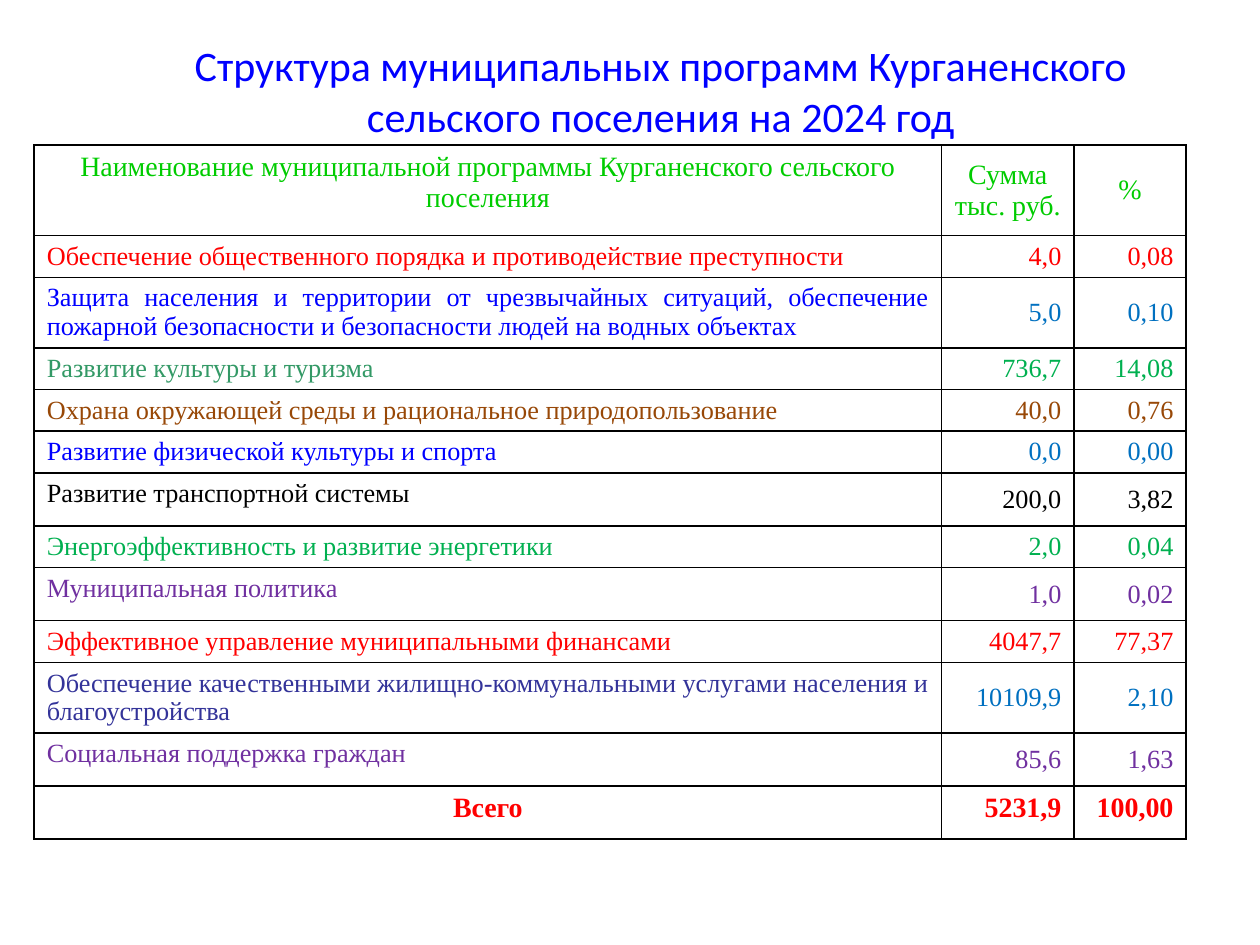
from dataclasses import dataclass

from lxml import etree
from pptx import Presentation
from pptx.dml.color import RGBColor
from pptx.enum.text import MSO_ANCHOR, MSO_AUTO_SIZE, PP_ALIGN
from pptx.oxml.ns import qn
from pptx.util import Cm, Pt

TOP, MIDDLE = MSO_ANCHOR.TOP, MSO_ANCHOR.MIDDLE
LEFT_RIGHT, CENTER, RIGHT = PP_ALIGN.JUSTIFY, PP_ALIGN.CENTER, PP_ALIGN.RIGHT
NO_AUTOFIT = MSO_AUTO_SIZE.NONE
TITLE_ONLY = 5


@dataclass(frozen=True)
class Theme:
    title_font: str = "Calibri"
    table_font: str = "Times New Roman"
    title_size: int = 24
    heading_size: int = 16
    body_size: int = 15
    border_width: int = 1
    black: str = "000000"
    red: str = "FF0000"
    blue: str = "0000FF"
    azure: str = "0070C0"
    lime: str = "00CC00"
    green: str = "00B050"
    sea_green: str = "339966"
    brown: str = "984807"
    purple: str = "7030A0"
    indigo: str = "333399"


THEME = Theme()
HEADER_ROW, SINGLE_ROW, DOUBLE_ROW, TALL_ROW = 1.83, 0.84, 1.42, 1.07
COLUMN_WIDTHS = (18.29, 2.67, 2.26)

TITLE = "Структура муниципальных программ Курганенского сельского поселения на 2024 год"
HEADINGS = (
    "Наименование муниципальной программы Курганенского сельского поселения",
    "Сумма тыс. руб.",
    "%",
)
# Name, amount, share, name colour, number colour, row height
PROGRAMS = (
    ("Обеспечение общественного порядка и противодействие преступности",
     "4,0", "0,08", THEME.red, THEME.red, SINGLE_ROW),
    ("Защита населения и территории от чрезвычайных ситуаций, обеспечение "
     "пожарной безопасности и безопасности людей на водных объектах",
     "5,0", "0,10", THEME.blue, THEME.azure, DOUBLE_ROW),
    ("Развитие культуры и туризма",
     "736,7", "14,08", THEME.sea_green, THEME.green, SINGLE_ROW),
    ("Охрана окружающей среды и рациональное природопользование",
     "40,0", "0,76", THEME.brown, THEME.brown, SINGLE_ROW),
    ("Развитие физической культуры и спорта",
     "0,0", "0,00", THEME.blue, THEME.azure, SINGLE_ROW),
    ("Развитие транспортной системы",
     "200,0", "3,82", THEME.black, THEME.black, TALL_ROW),
    ("Энергоэффективность и развитие энергетики",
     "2,0", "0,04", THEME.green, THEME.green, SINGLE_ROW),
    ("Муниципальная политика",
     "1,0", "0,02", THEME.purple, THEME.purple, TALL_ROW),
    ("Эффективное управление муниципальными финансами",
     "4047,7", "77,37", THEME.red, THEME.red, SINGLE_ROW),
    ("Обеспечение качественными жилищно-коммунальными услугами населения "
     "и благоустройства",
     "10109,9", "2,10", THEME.indigo, THEME.azure, DOUBLE_ROW),
    ("Социальная поддержка граждан",
     "85,6", "1,63", THEME.purple, THEME.purple, TALL_ROW),
)
TOTALS = ("Всего", "5231,9", "100,00")


class SlideBuilder:
    """Holds the theme and the slide being filled."""

    def __init__(self, slide, theme):
        self.slide = slide
        self.theme = theme

    def format_text(self, text_frame, text, font_name, size, color, align, bold=False):
        text_frame.text = text
        paragraph = text_frame.paragraphs[0]
        paragraph.alignment = align
        font = paragraph.font
        font.name, font.size, font.bold = font_name, Pt(size), bold
        font.color.rgb = RGBColor.from_string(color)

    def title(self, text, left, top, width, height):
        shape = self.slide.shapes.title
        shape.left, shape.top = Cm(left), Cm(top)
        shape.width, shape.height = Cm(width), Cm(height)
        text_frame = shape.text_frame
        text_frame.word_wrap = True
        text_frame.auto_size = NO_AUTOFIT
        text_frame.vertical_anchor = MIDDLE
        self.format_text(text_frame, text, self.theme.title_font,
                         self.theme.title_size, self.theme.blue, CENTER)

    def table(self, left, top, column_widths, row_heights):
        table = self.slide.shapes.add_table(
            len(row_heights), len(column_widths), Cm(left), Cm(top),
            Cm(sum(column_widths)), Cm(sum(row_heights))).table
        table.first_row = table.horz_banding = False
        for column, width in zip(table.columns, column_widths):
            column.width = Cm(width)
        for row, height in zip(table.rows, row_heights):
            row.height = Cm(height)
        return table

    def cell(self, cell, text, size, color, align, anchor, bold=False):
        cell.vertical_anchor = anchor
        cell.fill.background()
        self.format_text(cell.text_frame, text, self.theme.table_font,
                         size, color, align, bold)
        self.borders(cell)

    def borders(self, cell):
        """Draw all four sides; line elements must come before the fill."""
        properties = cell._tc.get_or_add_tcPr()
        for index, side in enumerate(("a:lnL", "a:lnR", "a:lnT", "a:lnB")):
            line = etree.Element(qn(side), w=str(Pt(self.theme.border_width)))
            fill = etree.SubElement(line, qn("a:solidFill"))
            etree.SubElement(fill, qn("a:srgbClr"), val=self.theme.black)
            properties.insert(index, line)


def main():
    presentation = Presentation()
    presentation.slide_width, presentation.slide_height = Cm(25.4), Cm(19.05)
    slide = presentation.slides.add_slide(presentation.slide_layouts[TITLE_ONLY])
    builder = SlideBuilder(slide, THEME)
    builder.title(TITLE, 2.54, 0.71, 21.56, 2.21)

    heights = [HEADER_ROW, *(program[-1] for program in PROGRAMS), TALL_ROW]
    table = builder.table(0.69, 2.92, COLUMN_WIDTHS, heights)

    for column, heading in enumerate(HEADINGS):
        builder.cell(table.cell(0, column), heading, THEME.heading_size, THEME.lime,
                     CENTER, MIDDLE if column else TOP)

    for row, (name, amount, share, name_color, number_color, _) in enumerate(PROGRAMS, 1):
        builder.cell(table.cell(row, 0), name, THEME.body_size, name_color, LEFT_RIGHT, TOP)
        for column, number in enumerate((amount, share), 1):
            builder.cell(table.cell(row, column), number, THEME.body_size,
                         number_color, RIGHT, MIDDLE)

    for column, text in enumerate(TOTALS):
        builder.cell(table.cell(len(heights) - 1, column), text, THEME.heading_size,
                     THEME.red, RIGHT if column else CENTER, TOP, bold=True)

    presentation.save("out.pptx")


if __name__ == "__main__":
    main()
